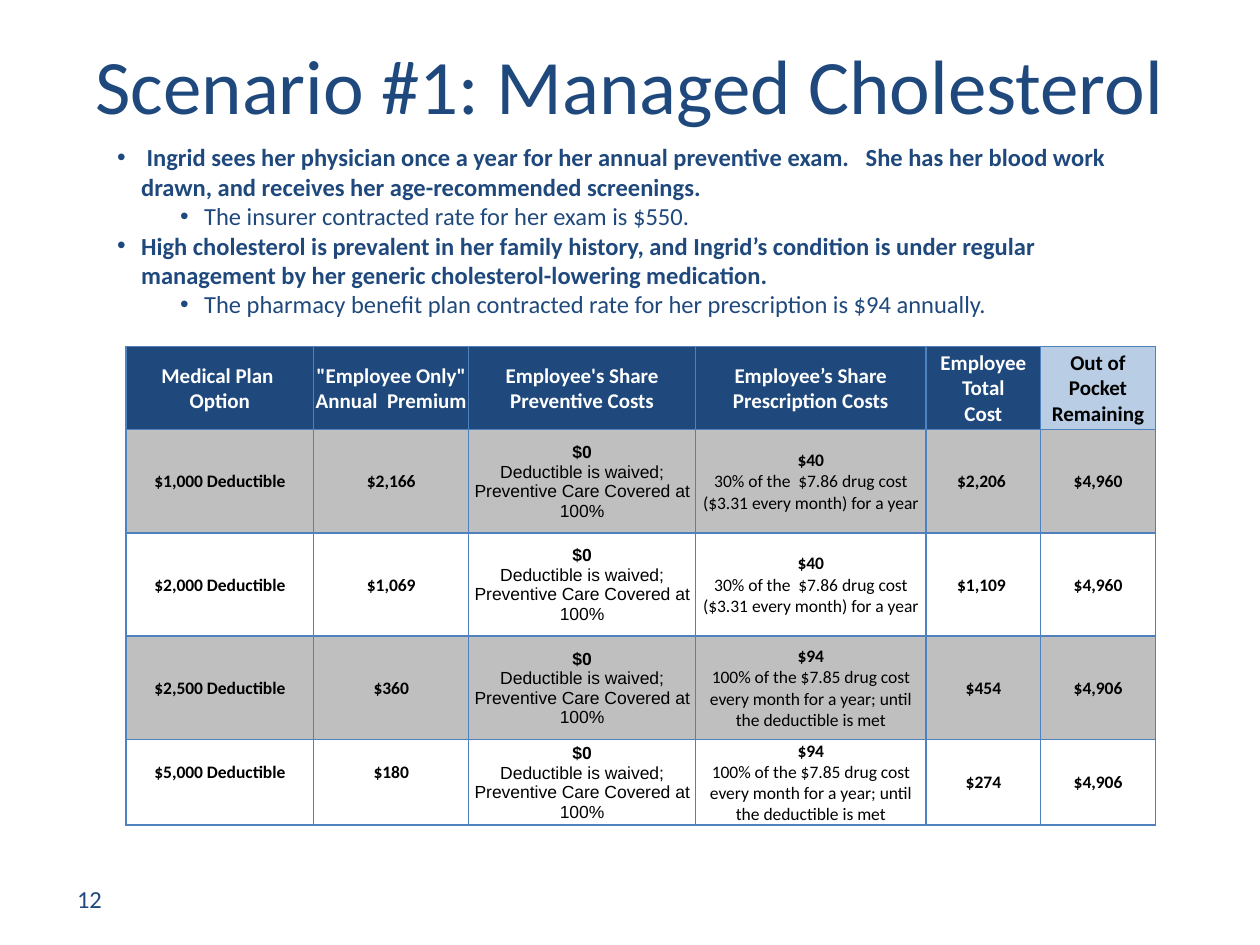
from lxml.etree import SubElement
from pptx import Presentation
from pptx.dml.color import RGBColor
from pptx.enum.text import MSO_ANCHOR, MSO_AUTO_SIZE, PP_ALIGN
from pptx.oxml.ns import qn
from pptx.util import Inches, Pt

NAVY, PALE_BLUE, BORDER_BLUE = "1F497D", "B9CDE5", "4F81BD"
GREY, WHITE, BLACK = "BFBFBF", "FFFFFF", "000000"

BULLETS = [
    (0, " Ingrid sees her physician once a year for her annual preventive exam.   "
        "She has her blood work drawn, and receives her age-recommended screenings."),
    (1, "The insurer contracted rate for her exam is $550."),
    (0, "High cholesterol is prevalent in her family history, and Ingrid’s condition "
        "is under regular management by her generic cholesterol-lowering medication."),
    (1, "The pharmacy benefit plan contracted rate for her prescription is $94 annually."),
]

HEADERS = [
    ["Medical Plan ", "Option"],
    ['"Employee Only" Annual  Premium'],
    ["Employee's Share Preventive Costs"],
    ["Employee’s Share Prescription Costs"],
    ["Employee Total", "Cost"],
    ["Out of Pocket Remaining"],
]
PREVENTIVE = ["$0", "Deductible is waived; Preventive Care Covered at 100%"]
COINSURANCE = ["$40", "30% of the  $7.86 drug cost ($3.31 every month) for a year"]
FULL_PRICE = ["$94", "100% of the $7.85 drug cost every month for a year; "
                     "until the deductible is met"]
# Deductible, premium, prescription share, total cost, out of pocket remaining
PLANS = [
    ("$1,000", "$2,166", COINSURANCE, "$2,206 ", "$4,960"),
    ("$2,000", "$1,069", COINSURANCE, "$1,109 ", "$4,960"),
    ("$2,500", "$360", FULL_PRICE, "$454", "$4,906"),
    ("$5,000", "$180", FULL_PRICE, "$274", "$4,906"),
]
COLUMN_WIDTHS = [1.49, 1.23, 1.8, 1.83, 0.91, 0.91]
ROW_HEIGHTS = [0.66, 0.82, 0.82, 0.82, 0.68]


def color(hex_string):
    return RGBColor.from_string(hex_string)


class PlanSlide:
    def __init__(self, slide, font="Calibri"):
        self.slide = slide
        self.font = font

    def place(self, shape, left, top, width, height):
        box = {"left": left, "top": top, "width": width, "height": height}
        for side, value in box.items():
            setattr(shape, side, Inches(value))

    def add_text(self, paragraph, text, size, ink=NAVY, bold=False, font=None,
                 align=PP_ALIGN.CENTER):
        paragraph.alignment = align
        run = paragraph.add_run()
        run.text = text
        style = {"size": Pt(size), "bold": bold, "name": font or self.font}
        for key, value in style.items():
            setattr(run.font, key, value)
        run.font.color.rgb = color(ink)

    def paragraphs(self, frame, count):
        return [frame.paragraphs[0]] + [frame.add_paragraph() for _ in range(count - 1)]

    def title(self, text, *box):
        holder = self.slide.shapes.title
        self.place(holder, *box)
        frame = holder.text_frame
        frame.auto_size = MSO_AUTO_SIZE.NONE
        frame.vertical_anchor = MSO_ANCHOR.MIDDLE
        self.add_text(frame.paragraphs[0], text, 44)

    def bullets(self, items, *box):
        holder = self.slide.placeholders[1]
        self.place(holder, *box)
        frame = holder.text_frame
        frame.auto_size = MSO_AUTO_SIZE.SHAPE_TO_FIT_TEXT
        for paragraph, (level, text) in zip(self.paragraphs(frame, len(items)), items):
            paragraph.level = level
            properties = paragraph._p.get_or_add_pPr()
            properties.set("marL", str(Inches(0.19 + 0.5 * level)))
            properties.set("indent", str(Inches(-0.19)))
            SubElement(properties, qn("a:buFont"), typeface="Arial")
            SubElement(properties, qn("a:buChar"), char="•")
            paragraph.space_before = Pt(0)
            self.add_text(paragraph, text, 14, bold=level == 0, align=PP_ALIGN.LEFT)

    def label(self, text, *box):
        holder = self.slide.shapes.add_textbox(*map(Inches, box))
        frame = holder.text_frame
        frame.word_wrap = True
        frame.vertical_anchor = MSO_ANCHOR.MIDDLE
        self.add_text(frame.paragraphs[0], text, 14)

    def table(self, left, top, widths, heights):
        holder = self.slide.shapes.add_table(
            len(heights), len(widths), Inches(left), Inches(top),
            Inches(sum(widths)), Inches(sum(heights)))
        table = holder.table
        table.first_row = table.horz_banding = False
        for column, width in zip(table.columns, widths):
            column.width = Inches(width)
        for row, height in zip(table.rows, heights):
            row.height = Inches(height)
        return table

    def cell(self, cell, lines, size, ink, fill, bold_lines, font=None, bottom=0):
        margins = {"left": 0.01, "right": 0.01, "top": 0.01, "bottom": bottom}
        for side, value in margins.items():
            setattr(cell, f"margin_{side}", Inches(value))
        cell.vertical_anchor = MSO_ANCHOR.MIDDLE
        properties = cell._tc.get_or_add_tcPr()
        for edge in ("lnL", "lnR", "lnT", "lnB"):
            line = SubElement(properties, qn(f"a:{edge}"), w=str(Pt(1)))
            solid = SubElement(line, qn("a:solidFill"))
            SubElement(solid, qn("a:srgbClr"), val=BORDER_BLUE)
        if fill:
            cell.fill.solid()
            cell.fill.fore_color.rgb = color(fill)
        else:
            cell.fill.background()
        paragraphs = self.paragraphs(cell.text_frame, len(lines))
        for index, (paragraph, text) in enumerate(zip(paragraphs, lines)):
            self.add_text(paragraph, text, size, ink, index < bold_lines, font)


def main():
    deck = Presentation()
    deck.slide_width, deck.slide_height = Inches(10), Inches(7.5)
    page = PlanSlide(deck.slides.add_slide(deck.slide_layouts[1]))

    # Scenario description
    page.bullets(BULLETS, 0.83, 1.08, 8.58, 1.51)
    page.title("Scenario #1: Managed Cholesterol", 0.5, 0, 9, 1.33)

    # Cost comparison: header row
    costs = page.table(1, 2.75, COLUMN_WIDTHS, ROW_HEIGHTS)
    last_column = len(HEADERS) - 1
    for column, lines in enumerate(HEADERS):
        ink, fill = (BLACK, PALE_BLUE) if column == last_column else (WHITE, NAVY)
        page.cell(costs.cell(0, column), lines, 12, ink, fill, len(lines))

    # Cost comparison: one row per plan, every other one shaded
    for row, (deductible, premium, prescription, total, remaining) in enumerate(PLANS, 1):
        cells = [[f"{deductible} Deductible"], [premium], PREVENTIVE,
                 prescription, [total], [remaining]]
        for column, lines in enumerate(cells):
            raised = row == len(PLANS) and column < 2
            page.cell(costs.cell(row, column), lines, 10, BLACK,
                      GREY if row % 2 else None, 1,
                      font="Arial" if lines is PREVENTIVE else None,
                      bottom=0.17 if raised else 0)

    # Page number
    page.label("12", 0.25, 6.93, 0.92, 0.4)
    deck.save("out.pptx")


if __name__ == "__main__":
    main()
